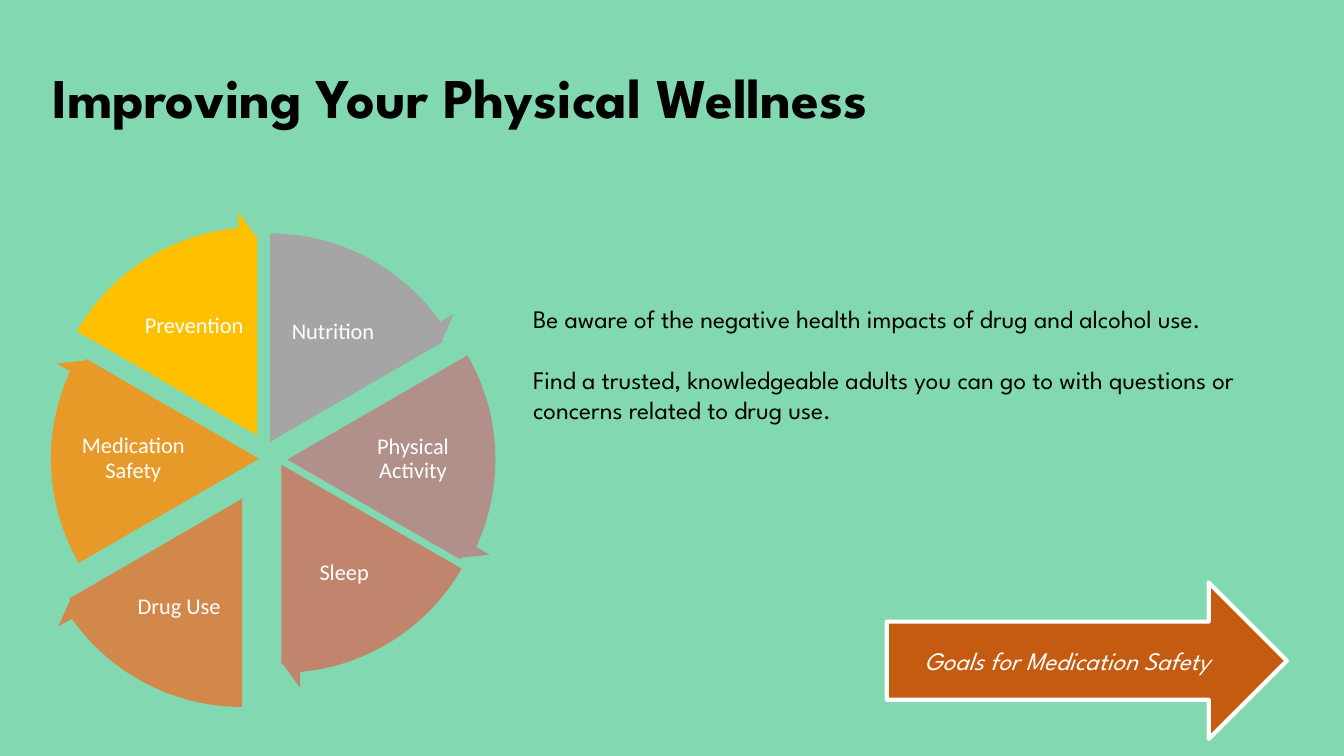
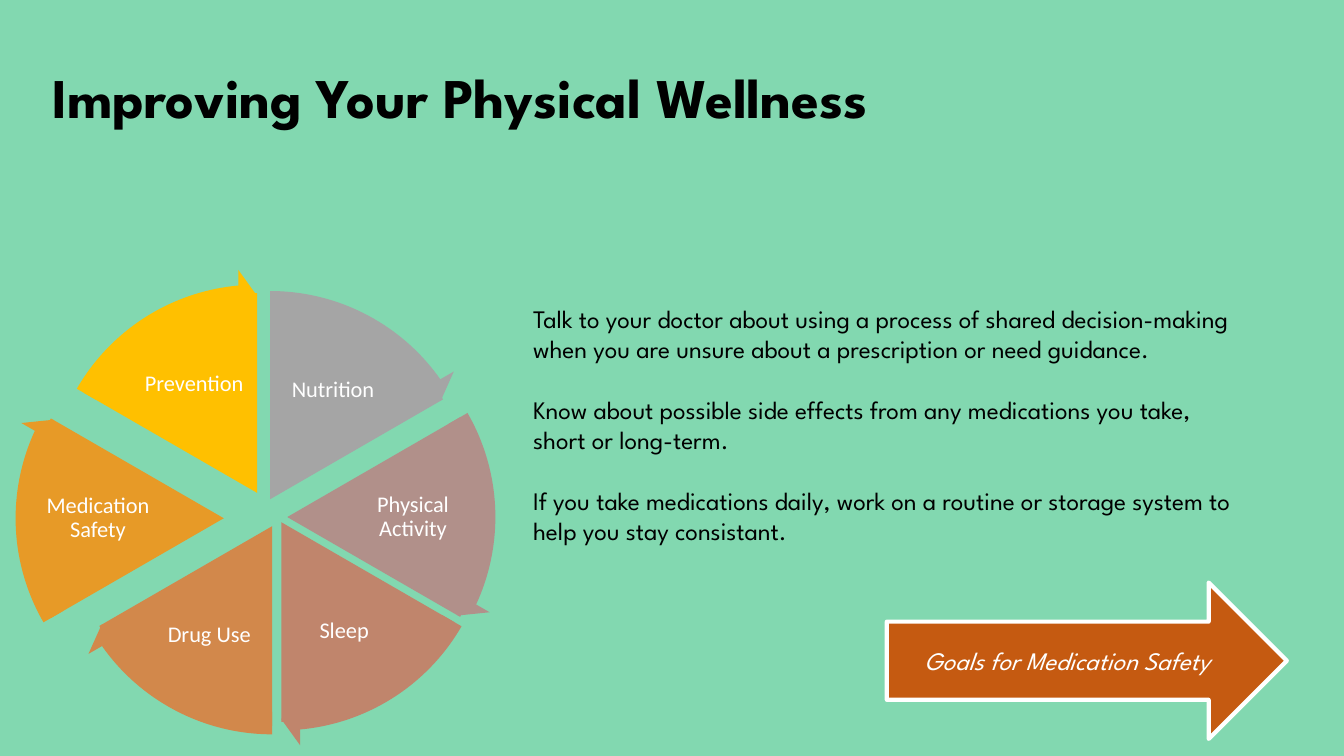
from math import cos, radians, sin

from lxml.etree import SubElement
from pptx import Presentation
from pptx.dml.color import RGBColor
from pptx.enum.shapes import MSO_SHAPE as Preset
from pptx.enum.text import MSO_ANCHOR as Anchor, MSO_AUTO_SIZE as AutoSize, PP_ALIGN as Align
from pptx.oxml.ns import qn
from pptx.util import Cm, Pt

TITLE = "Improving Your Physical Wellness"
GOAL = "Goals for Medication Safety"
WEDGES = [
    ("Nutrition", "A5A5A5", 6.81, 11.13),
    ("Physical Activity", "B1908A", 7.24, 11.58),
    ("Sleep", "C0856C", 7.09, 11.71),
    ("Drug Use", "D2884B", 6.86, 11.81),
    ("Medication Safety", "E79A27", 6.53, 11.56),
    ("Prevention", "FFC000", 6.48, 10.97),
]
PAGES = [
    {
        "drop": 0,
        "pulled": {"Drug Use": (-0.76, 0.76)},
        "advice": [
            "Be aware of the negative health impacts of drug and alcohol use.",
            "Find a trusted, knowledgeable adults you can go to with questions or "
            "concerns related to drug use.",
        ],
    },
    {
        "drop": 1.45,
        "pulled": {"Medication Safety": (-0.89, 0.05)},
        "advice": [
            "Talk to your doctor about using a process of shared decision-making "
            "when you are unsure about a prescription or need guidance.",
            "Know about possible side effects from any medications you take, "
            "short or long-term.",
            "If you take medications daily, work on a routine or storage system to "
            "help you stay consistant.",
        ],
    },
]


def color(value):
    return RGBColor.from_string(value)


class WellnessDeck:
    background, ink, light, accent = "82D8B0", "000000", "FFFFFF", "C55A11"
    heading_font, label_font = "League Spartan", "Calibri"
    pie_size, ring_size = 10.06, 11.28
    label_radius, label_width, label_height = 3.17, 2.75, 2
    head_angle = 3.275

    def __init__(self):
        self.deck = Presentation()
        self.deck.slide_width, self.deck.slide_height = Cm(33.87), Cm(19.05)
        fill = self.deck.slide_master.background.fill
        fill.solid()
        fill.fore_color.rgb = color(self.background)
        self.page = None

    def add_page(self):
        self.page = self.deck.slides.add_slide(self.deck.slide_layouts[1])

    def style(self, para, size, tint, font=heading_font, align=Align.LEFT, bold=False, italic=False):
        para.alignment = align
        para.font.name, para.font.size = font, Pt(size)
        para.font.bold, para.font.italic = bold, italic
        para.font.color.rgb = color(tint)

    def place(self, holder, left, top, width, height):
        holder.left, holder.top = Cm(left), Cm(top)
        holder.width, holder.height = Cm(width), Cm(height)
        frame = holder.text_frame
        frame.auto_size, frame.word_wrap = AutoSize.NONE, True
        frame.vertical_anchor = Anchor.TOP
        return frame

    def title(self, text):
        frame = self.place(self.page.shapes.title, 1.07, 1.45, 28.93, 1.96)
        frame.text = text
        self.style(frame.paragraphs[0], 40, self.ink, bold=True)

    def body(self, lines):
        frame = self.place(self.page.placeholders[1], 13.18, 7.52, 18.34, 7.2)
        frame.text = "\n".join(lines)
        for index, para in enumerate(frame.paragraphs):
            self.style(para, 18, self.ink)
            para.space_before = Pt(21.6 if index else 0)
            properties = para._p.get_or_add_pPr()
            properties.set("marL", "0")
            properties.set("indent", "0")
            properties.insert_element_before(
                SubElement(properties, qn("a:buNone")), "a:tabLst", "a:defRPr", "a:extLst")

    def shape(self, preset, left, top, width, height, tint, adjustments=()):
        shape = self.page.shapes.add_shape(preset, Cm(left), Cm(top), Cm(width), Cm(height))
        shape.shadow.inherit = False
        shape.fill.solid()
        shape.fill.fore_color.rgb = color(tint)
        shape.line.fill.background()
        for index, value in enumerate(adjustments):
            shape.adjustments[index] = value
        return shape

    def round_shape(self, preset, x, y, size, tint, adjustments):
        self.shape(preset, x - size / 2, y - size / 2, size, size, tint, adjustments)

    def label(self, text, x, y):
        box = self.page.shapes.add_textbox(
            Cm(x - self.label_width / 2), Cm(y - self.label_height / 2),
            Cm(self.label_width), Cm(self.label_height))
        frame = box.text_frame
        frame.word_wrap, frame.vertical_anchor = True, Anchor.MIDDLE
        frame.margin_left = frame.margin_right = Cm(0.05)
        frame.margin_top = frame.margin_bottom = Cm(0.05)
        frame.text = text
        para = frame.paragraphs[0]
        para.line_spacing = 0.9
        self.style(para, 16, self.light, self.label_font, Align.CENTER)

    def wedge(self, index, text, tint, x, y):
        degrees = (270 + 60 * index) % 360
        start, end = degrees * 0.6, (degrees + 60) % 360 * 0.6
        self.round_shape(Preset.PIE, x, y, self.pie_size, tint, (start, end))
        ring = (0.05, self.head_angle, end - self.head_angle, start, 0.06)
        self.round_shape(Preset.CIRCULAR_ARROW, x, y, self.ring_size, tint, ring)
        middle = radians(degrees + 30)
        self.label(text, x + self.label_radius * cos(middle), y + self.label_radius * sin(middle))

    def wheel(self, drop, pulled):
        for index, (text, tint, x, y) in enumerate(WEDGES):
            right, down = pulled.get(text, (0, 0))
            self.wedge(index, text, tint, x + right, y + drop + down)

    def goal_arrow(self, text):
        arrow = self.shape(Preset.RIGHT_ARROW, 22.35, 14.68, 10.08, 3.94, self.accent)
        arrow.line.color.rgb = color(self.light)
        arrow.line.width = Pt(3)
        frame = arrow.text_frame
        frame.word_wrap, frame.vertical_anchor = True, Anchor.MIDDLE
        frame.text = text
        self.style(frame.paragraphs[0], 18, self.light, align=Align.CENTER, italic=True)


def main():
    wellness = WellnessDeck()
    for content in PAGES:
        wellness.add_page()
        wellness.title(TITLE)
        wellness.wheel(content["drop"], content["pulled"])
        wellness.body(content["advice"])
        wellness.goal_arrow(GOAL)
    wellness.deck.save("out.pptx")


if __name__ == "__main__":
    main()
